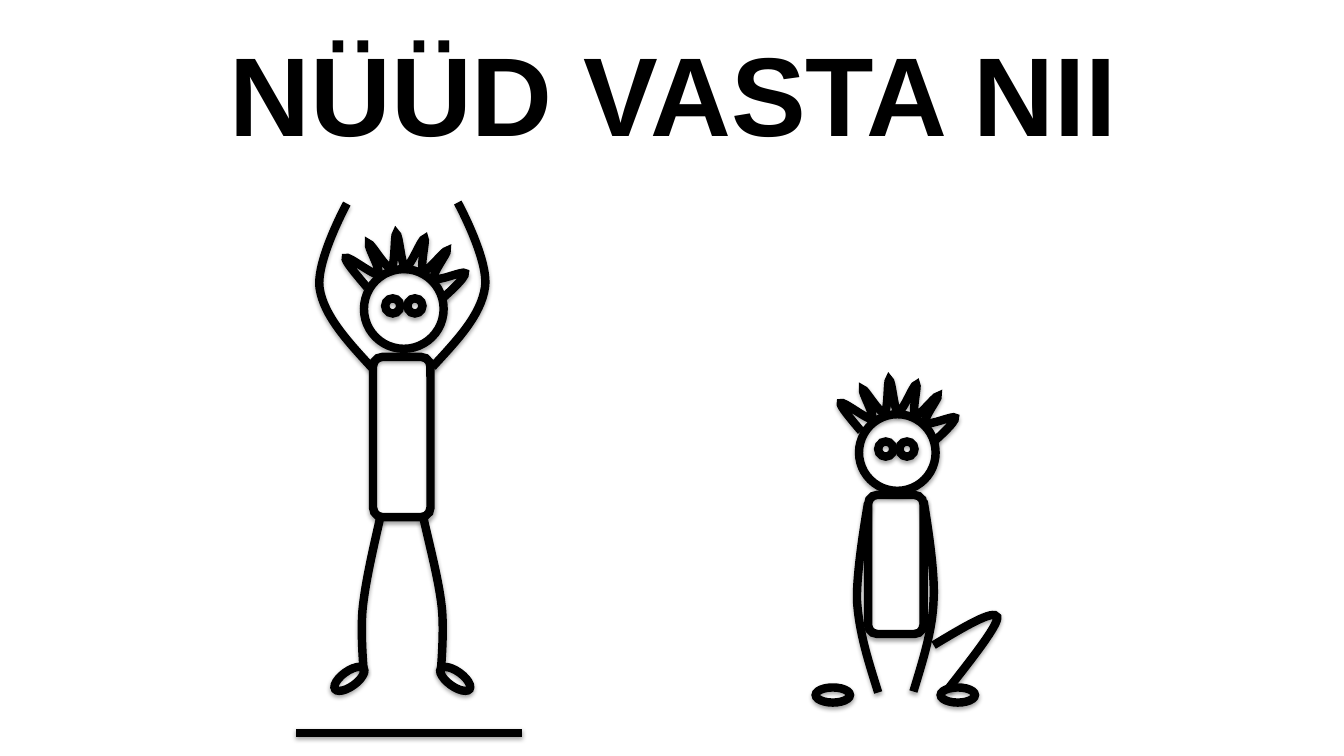
from dataclasses import dataclass

from lxml import etree
from pptx import Presentation
from pptx.dml.color import RGBColor
from pptx.enum.shapes import MSO_CONNECTOR, MSO_SHAPE
from pptx.enum.text import MSO_ANCHOR, MSO_AUTO_SIZE, PP_ALIGN
from pptx.oxml.ns import qn
from pptx.util import Pt

ELLIPSE = MSO_SHAPE.OVAL
ROUNDED = MSO_SHAPE.ROUNDED_RECTANGLE
STRAIGHT = MSO_CONNECTOR.STRAIGHT
CENTER = PP_ALIGN.CENTER
MIDDLE = MSO_ANCHOR.MIDDLE
NO_AUTOFIT = MSO_AUTO_SIZE.NONE

PX = 9144  # 100 px to the inch
TITLE_ONLY = 5


@dataclass(frozen=True)
class Theme:
    ink: RGBColor = RGBColor(0, 0, 0)
    font: str = "Arial"
    title_size: int = 80
    stroke: int = 6


THEME = Theme()

TITLE = "NÜÜD VASTA NII"
TITLE_BOX = (23, -21, 1290, 240)

# Curves: a start point, then two control points and an end point per segment.
# Hair is measured from the top left corner of its own box.
HAIR_WIDTH = 119
HAIR = [
    (21, 53), (10, 40), (-2, 26), (0, 24),
    (2, 21), (28, 42), (32, 40), (36, 38), (21, 12), (23, 10),
    (25, 9), (40, 35), (45, 34), (49, 32), (48, 0), (50, 0),
    (53, 0), (55, 32), (59, 33), (64, 34), (75, 4), (78, 5),
    (80, 5), (73, 35), (77, 37), (80, 39), (98, 16), (100, 17),
    (102, 18), (84, 41), (88, 44), (91, 48), (117, 36), (118, 39),
    (120, 43), (97, 63), (97, 63),
]

SITTING = {
    "body": (861, 491, 55, 138),
    "head": (852, 411, 76, 76),
    "hair": (834, 377, 114),
    "eyes": [(871, 438, 15, 15), (892, 438, 15, 15)],
    "feet": [(933, 682, 34, 15, 0), (809, 682, 34, 15, 0)],
    "limbs": [
        [(871, 687), (862, 658), (852, 628), (850, 596), (849, 565), (861, 499), (861, 499)],
        [(906, 686), (915, 656), (925, 626), (926, 595), (928, 563), (916, 497), (916, 497)],
        [(926, 640), (956, 622), (986, 604), (989, 612), (991, 619), (966, 651), (940, 684)],
    ],
    "ground": None,
}

JUMPING = {
    "body": (370, 354, 57, 159),
    "head": (361, 267, 79, 79),
    "hair": (343, 232, 119),
    "eyes": [(382, 296, 15, 15), (404, 296, 15, 15)],
    "feet": [(329, 666, 35, 15, 324), (434, 666, 35, 15, 35.7)],
    "limbs": [
        [(377, 514), (370, 545), (363, 575), (360, 601), (357, 626), (361, 668), (361, 668)],
        [(420, 514), (427, 545), (435, 575), (438, 601), (441, 626), (437, 668), (437, 668)],
        [(429, 364), (453, 338), (477, 313), (481, 285), (485, 258), (454, 201), (454, 201)],
        [(369, 365), (345, 339), (321, 313), (317, 286), (313, 259), (344, 202), (344, 202)],
    ],
    "ground": (294, 727, 518, 727),
}

SHADOW = """
<a:effectLst xmlns:a="http://schemas.openxmlformats.org/drawingml/2006/main">
  <a:outerShdw blurRad="40000" dist="23000" dir="5400000" rotWithShape="0">
    <a:srgbClr val="000000"><a:alpha val="35000"/></a:srgbClr>
  </a:outerShdw>
</a:effectLst>"""


def emu(*lengths):
    return [round(length * PX) for length in lengths]


def ink_outline(shape):
    shape.line.color.rgb = THEME.ink
    shape.line.width = Pt(THEME.stroke)
    properties = shape._element.spPr
    etree.SubElement(properties.find(qn("a:ln")), qn("a:miter"), lim="800000")
    properties.append(etree.fromstring(SHADOW))


def add_outlined(group, kind, box, rotation=0):
    shape = group.shapes.add_shape(kind, *emu(*box))
    shape.rotation = rotation
    shape.fill.background()
    ink_outline(shape)


def add_curve(group, points):
    """Draw a freeform through the end points, then bend each side into a Bézier."""
    points = [emu(*point) for point in points]
    builder = group.shapes.build_freeform(*points[0], scale=1.0)
    builder.add_line_segments(points[3::3], close=False)
    shape = builder.convert_to_shape()
    sides = list(shape._element.spPr.iter(qn("a:lnTo")))
    for index, side in enumerate(sides):
        side.tag = qn("a:cubicBezTo")
        controls = points[3 * index + 1:3 * index + 3]
        for position, (x, y) in enumerate(controls):
            control = etree.Element(qn("a:pt"), x=str(x - shape.left), y=str(y - shape.top))
            side.insert(position, control)
    shape.fill.background()
    ink_outline(shape)


def add_figure(slide, figure):
    group = slide.shapes.add_group_shape()
    add_outlined(group, ROUNDED, figure["body"])
    for box in [figure["head"], *figure["eyes"]]:
        add_outlined(group, ELLIPSE, box)
    for *box, rotation in figure["feet"]:
        add_outlined(group, ELLIPSE, box, rotation)
    left, top, width = figure["hair"]
    ratio = width / HAIR_WIDTH
    hair = [(left + x * ratio, top + y * ratio) for x, y in HAIR]
    for points in [hair, *figure["limbs"]]:
        add_curve(group, points)
    if figure["ground"]:
        ink_outline(group.shapes.add_connector(STRAIGHT, *emu(*figure["ground"])))


def write_text(shape, text, size, bold=False, line_spacing=1.0):
    frame = shape.text_frame
    frame.word_wrap = True
    frame.auto_size = NO_AUTOFIT
    frame.vertical_anchor = MIDDLE
    frame.margin_left = frame.margin_right = 13 * PX
    frame.margin_top = frame.margin_bottom = 7 * PX
    paragraph = frame.paragraphs[0]
    paragraph.alignment = CENTER
    paragraph.line_spacing = line_spacing
    run = paragraph.add_run()
    run.text = text
    run.font.name = THEME.font
    run.font.size = Pt(size)
    run.font.bold = bold
    run.font.color.rgb = THEME.ink


def main():
    presentation = Presentation()
    presentation.slide_width, presentation.slide_height = emu(1333, 750)
    slide = presentation.slides.add_slide(presentation.slide_layouts[TITLE_ONLY])
    title = slide.shapes.title
    title.left, title.top, title.width, title.height = emu(*TITLE_BOX)
    write_text(title, TITLE, size=THEME.title_size, bold=True, line_spacing=0.9)
    for figure in (SITTING, JUMPING):
        add_figure(slide, figure)
    presentation.save("out.pptx")


if __name__ == "__main__":
    main()
